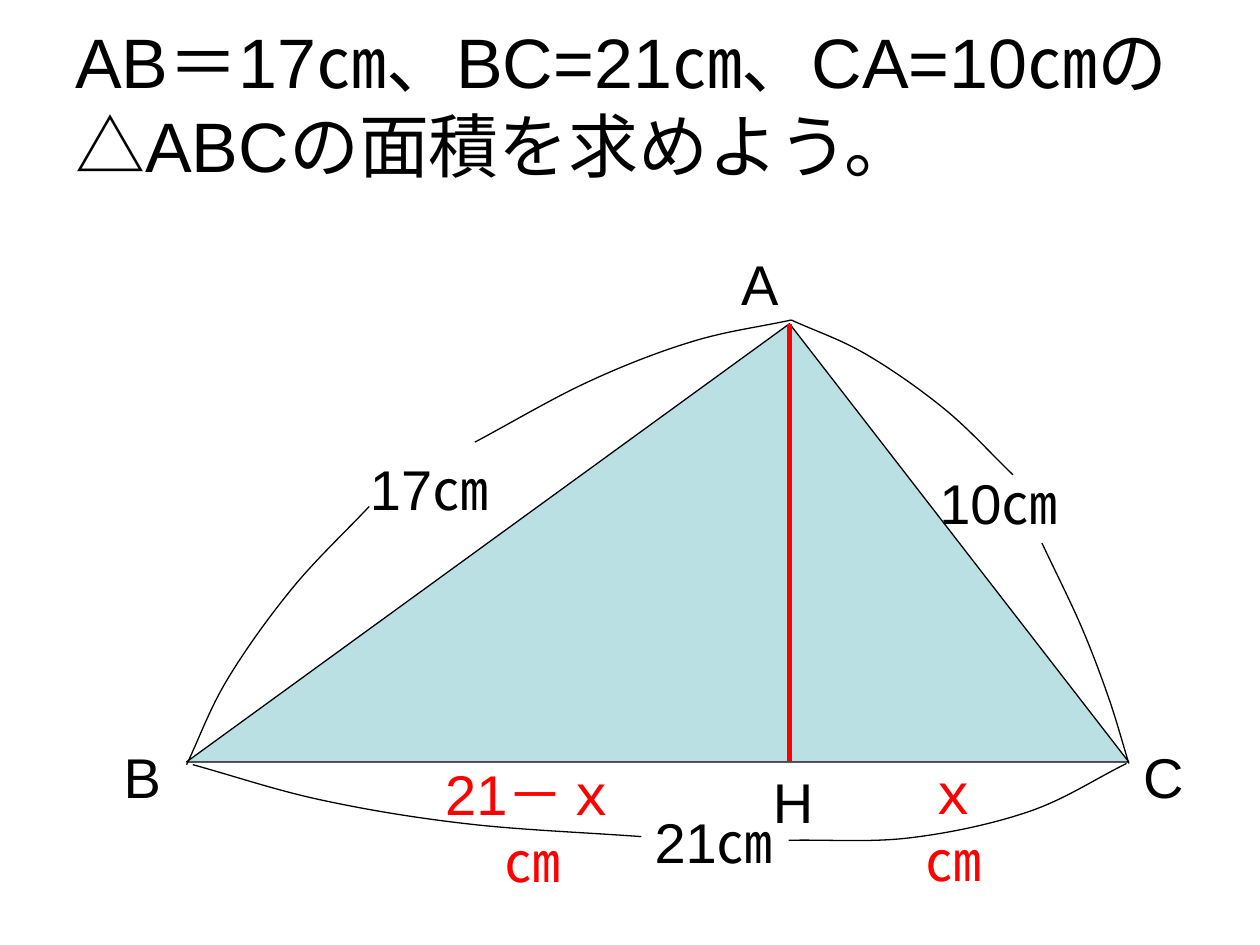
from lxml import etree
from pptx import Presentation
from pptx.dml.color import RGBColor
from pptx.enum.shapes import MSO_CONNECTOR as Connector, MSO_SHAPE as Shape
from pptx.enum.text import MSO_ANCHOR as Anchor, MSO_AUTO_SIZE as AutoSize, PP_ALIGN as Align
from pptx.oxml.ns import qn
from pptx.util import Pt

COLORS = {"ink": "000000", "accent": "FF0000", "area": "BBE0E3"}


def write(frame, text, size=32, color="ink", align=Align.CENTER, font="Arial"):
    para = frame.paragraphs[0]
    para.alignment = align
    span = para.add_run()
    span.text = text
    span.font.name = font
    span.font.size = Pt(size)
    span.font.color.rgb = RGBColor.from_string(COLORS[color])


def spline(knots):
    last = len(knots) - 1
    slopes = []
    for i in range(last + 1):
        before, after = max(i - 1, 0), min(i + 1, last)
        slopes.append([(b - a) / (3 * (after - before))
                       for a, b in zip(knots[before], knots[after])])
    points = [knots[0]]
    for i in range(last):
        (x1, y1), (x2, y2) = knots[i], knots[i + 1]
        (dx1, dy1), (dx2, dy2) = slopes[i], slopes[i + 1]
        points += [(x1 + dx1, y1 + dy1), (x2 - dx2, y2 - dy2), (x2, y2)]
    return points


class Diagram:
    """Draws styled elements on the current slide."""

    def __init__(self, page, thin=0.75):
        self.shapes = page.shapes
        self.thin = thin

    def outline(self, line, color="ink", width=None):
        line.color.rgb = RGBColor.from_string(COLORS[color])
        line.width = Pt(width or self.thin)

    def title(self, text, left, top, width, height):
        box = self.shapes.add_textbox(Pt(left), Pt(top), Pt(width), Pt(height))
        frame = box.text_frame
        frame.word_wrap = True
        frame.vertical_anchor = Anchor.MIDDLE
        write(frame, text, size=40, align=Align.LEFT)

    def label(self, text, left, top, width, color="ink"):
        box = self.shapes.add_textbox(Pt(left), Pt(top), Pt(width), Pt(46))
        frame = box.text_frame
        frame.word_wrap = False
        frame.auto_size = AutoSize.SHAPE_TO_FIT_TEXT
        write(frame, text, color=color)

    def triangle(self, left, top, width, height, apex):
        shape = self.shapes.add_shape(Shape.ISOSCELES_TRIANGLE, Pt(left), Pt(top), Pt(width), Pt(height))
        shape.adjustments[0] = apex
        shape.shadow.inherit = False
        shape.fill.solid()
        shape.fill.fore_color.rgb = RGBColor.from_string(COLORS["area"])
        self.outline(shape.line)

    def line(self, x1, y1, x2, y2, color, width):
        line = self.shapes.add_connector(Connector.STRAIGHT, Pt(x1), Pt(y1), Pt(x2), Pt(y2))
        self.outline(line.line, color, width)
        etree.SubElement(line.element.spPr, qn("a:effectLst"))

    def curve(self, knots):
        start, *rest = [(Pt(x), Pt(y)) for x, y in spline(knots)]
        builder = self.shapes.build_freeform(*start)
        builder.add_line_segments(rest, close=False)
        shape = builder.convert_to_shape()
        segments = shape.element.findall(".//" + qn("a:lnTo"))
        for i in range(0, len(segments), 3):
            bezier = etree.Element(qn("a:cubicBezTo"))
            segments[i].addprevious(bezier)
            for segment in segments[i:i + 3]:
                bezier.append(segment[0])
                segment.getparent().remove(segment)
        shape.shadow.inherit = False
        shape.fill.background()
        self.outline(shape.line)


def main():
    deck = Presentation()
    deck.slide_width, deck.slide_height = Pt(720), Pt(540)
    diagram = Diagram(deck.slides.add_slide(deck.slide_layouts[6]))

    diagram.title("AB＝17㎝、BC=21㎝、CA=10㎝の△ABCの面積を求めよう。", 36, 8.6, 648, 100)
    diagram.triangle(106.6, 185, 538.4, 250.4, apex=0.64)
    diagram.line(451, 185, 451, 435, "accent", 3)

    for text, left, top, width in [
        ("A", 416.2, 139, 36), ("B", 63.4, 420.5, 36), ("C", 645.8, 420.5, 38),
        ("H", 434.2, 435, 38), ("10㎝", 529.2, 264.2, 82.8),
        ("21㎝", 366.5, 458, 82.8), ("17㎝", 203.8, 256.3, 82.8),
    ]:
        diagram.label(text, left, top, width)
    diagram.label("ｘ㎝", 513.4, 430, 63.4, "accent")
    diagram.label("21－ｘ㎝", 238.3, 430.6, 131.8, "accent")

    for knots in [
        [(110.2, 437), (183.6, 457.2), (267.8, 470.9), (366.5, 478.1)],
        [(643.7, 436.3), (588.2, 463.7), (519.8, 478.8), (450.7, 480.2)],
        [(452.2, 182.9), (396, 195.1), (336.2, 218.2), (271.4, 252.7)],
        [(106.6, 437), (129.6, 388.8), (167, 336.2), (211, 289.4)],
        [(452.2, 182.9), (494.6, 202.3), (540, 234), (578.9, 271.4)],
        [(645.1, 436.3), (633.6, 398.9), (617.8, 357.8), (595.4, 310.3)],
    ]:
        diagram.curve(knots)

    deck.save("out.pptx")


if __name__ == "__main__":
    main()
